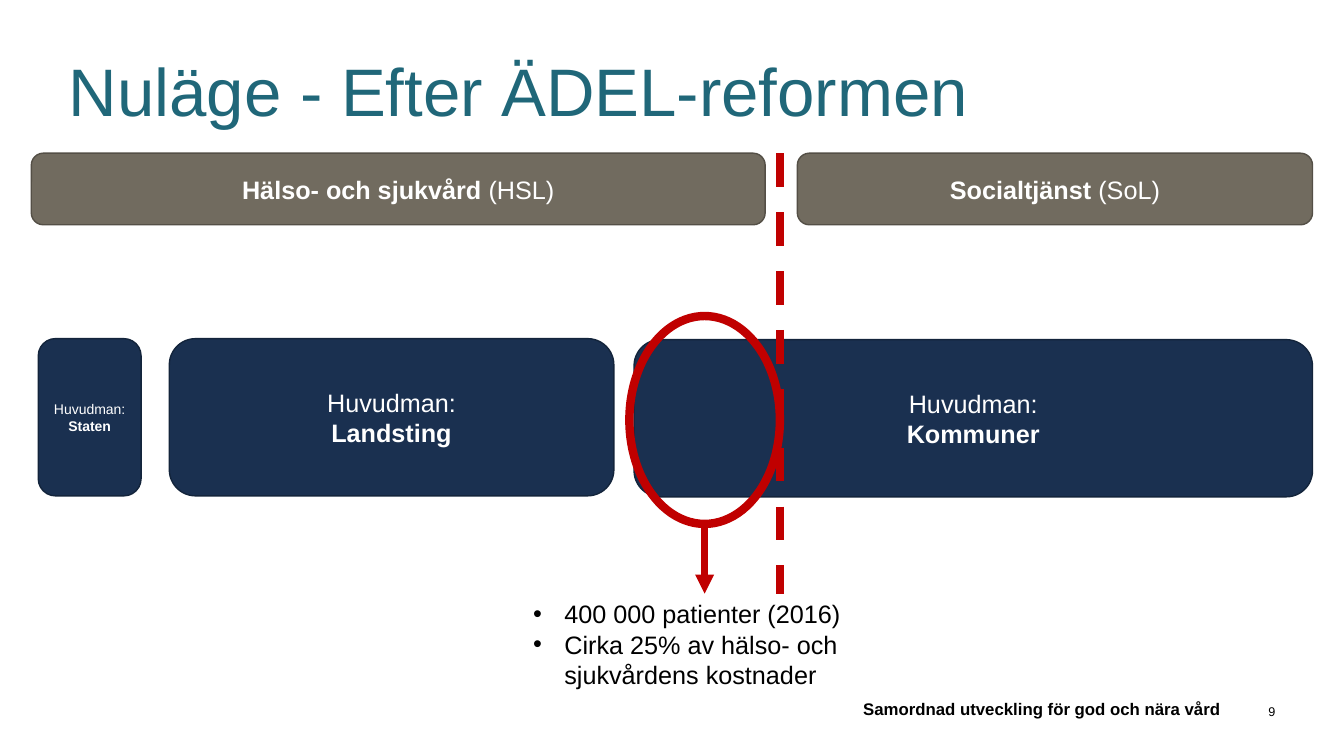
from dataclasses import dataclass
from typing import Optional

from lxml.etree import SubElement
from pptx import Presentation
from pptx.dml.color import RGBColor
from pptx.enum.dml import MSO_LINE_DASH_STYLE as Dash
from pptx.enum.shapes import MSO_CONNECTOR as Connector, MSO_SHAPE as Preset
from pptx.enum.text import MSO_ANCHOR as Anchor, PP_ALIGN as Align
from pptx.oxml.ns import qn
from pptx.util import Inches, Pt

COLOURS = {
    "title": "206779",
    "black": "000000",
    "white": "FFFFFF",
    "navy": "1A3050",
    "navy_edge": "13243B",
    "taupe": "716B5F",
    "taupe_edge": "544F46",
    "red": "C00000",
}
FONT = "Arial"
WIDTH, HEIGHT = Inches(13.33), Inches(7.5)
HEADER_TOP, HEADER_HEIGHT = 20.27, 9.47
OWNER_TOP, OWNER_HEIGHT = 44.8, 20.8
FOOTER_TOP, FOOTER_HEIGHT = 91.87, 3.2
NOTE_TOP = 78.53
BORDER_X = 58.05

Run = tuple[str, bool]
Lines = list[list[Run]]


@dataclass(frozen=True)
class Area:
    """Position and size in percent of the slide."""

    left: float
    top: float
    width: float
    height: float

    def lengths(self) -> tuple[int, int, int, int]:
        return across(self.left), down(self.top), across(self.width), down(self.height)


@dataclass(frozen=True)
class Box:
    area: Area
    lines: Lines
    colour: str
    size: int = 18


def across(percent: float) -> int:
    return round(WIDTH * percent / 100)


def down(percent: float) -> int:
    return round(HEIGHT * percent / 100)


def rgb(name: str) -> RGBColor:
    return RGBColor.from_string(COLOURS[name])


def owner(name: str, left: float, width: float, size: int = 18, top: float = OWNER_TOP) -> Box:
    lines = [[("Huvudman:", False)], [(name, True)]]
    return Box(Area(left, top, width, OWNER_HEIGHT), lines, "navy", size)


def header(name: str, law: str, left: float, width: float) -> Box:
    lines = [[(name, True), (f" ({law})", False)]]
    return Box(Area(left, HEADER_TOP, width, HEADER_HEIGHT), lines, "taupe")


def write(shape, lines: Lines, *, size: int, colour: str, align=Align.LEFT,
          anchor=Anchor.TOP, insets: Optional[tuple[float, float]] = None,
          spacing: Optional[float] = None, bullet: bool = False) -> None:
    frame = shape.text_frame
    frame.word_wrap = True
    frame.vertical_anchor = anchor
    if insets is not None:
        frame.margin_left = frame.margin_right = Inches(insets[0])
        frame.margin_top = frame.margin_bottom = Inches(insets[1])
    for index, line in enumerate(lines):
        paragraph = frame.add_paragraph() if index else frame.paragraphs[0]
        paragraph.alignment = align
        if spacing:
            paragraph.line_spacing = spacing
        if bullet:
            properties = paragraph._p.get_or_add_pPr()
            properties.set("marL", str(Inches(0.31)))
            properties.set("indent", str(-Inches(0.31)))
            SubElement(properties, qn("a:buFont")).set("typeface", FONT)
            SubElement(properties, qn("a:buChar")).set("char", "•")
        for text, bold in line:
            run = paragraph.add_run()
            run.text = text
            run.font.name = FONT
            run.font.size = Pt(size)
            run.font.bold = bold
            run.font.color.rgb = rgb(colour)


def add_text(slide, area: Area, lines: Lines, **text_format) -> None:
    write(slide.shapes.add_textbox(*area.lengths()), lines, **text_format)


def add_box(slide, box: Box) -> None:
    shape = slide.shapes.add_shape(Preset.ROUNDED_RECTANGLE, *box.area.lengths())
    shape.shadow.inherit = False
    shape.fill.solid()
    shape.fill.fore_color.rgb = rgb(box.colour)
    shape.line.color.rgb = rgb(f"{box.colour}_edge")
    shape.line.width = Pt(1)
    write(shape, box.lines, size=box.size, colour="white", align=Align.CENTER, anchor=Anchor.MIDDLE)


def add_ring(slide, area: Area) -> None:
    shape = slide.shapes.add_shape(Preset.OVAL, *area.lengths())
    shape.shadow.inherit = False
    shape.fill.background()
    shape.line.color.rgb = rgb("red")
    shape.line.width = Pt(6)


def add_vertical(slide, x: float, top: float, bottom: float, width: float,
                 dashed: bool = False, arrow: bool = False) -> None:
    connector = slide.shapes.add_connector(
        Connector.STRAIGHT, across(x), down(top), across(x), down(bottom))
    connector.line.color.rgb = rgb("red")
    connector.line.width = Pt(width)
    if dashed:
        connector.line.dash_style = Dash.DASH
    if arrow:
        SubElement(connector.line._get_or_add_ln(), qn("a:tailEnd")).set("type", "triangle")
    SubElement(connector._element.spPr, qn("a:effectLst"))


def main() -> None:
    presentation = Presentation()
    presentation.slide_width, presentation.slide_height = WIDTH, HEIGHT
    slide = presentation.slides.add_slide(presentation.slide_layouts[6])

    add_text(slide, Area(5.1, 5.2, 89.8, 15.07), [[("Nuläge - Efter ÄDEL-reformen", False)]],
             size=48, colour="title", anchor=Anchor.MIDDLE, insets=(0, 0.05), spacing=0.85)
    footers = [
        (17.03, 73.8, "Samordnad utveckling för god och nära vård", 12, True),
        (90.9, 4, "9", 9, False),
    ]
    for left, width, text, size, bold in footers:
        add_text(slide, Area(left, FOOTER_TOP, width, FOOTER_HEIGHT), [[(text, bold)]], size=size,
                 colour="black", align=Align.RIGHT, anchor=Anchor.BOTTOM, insets=(0, 0))

    for box in (
        owner("Landsting", 12.6, 33.08),
        owner("Kommuner", 47.18, 50.48, top=44.93),
        header("Hälso- och sjukvård", "HSL", 2.33, 54.6),
        header("Socialtjänst", "SoL", 59.33, 38.33),
        owner("Staten", 2.85, 7.65, size=10),
    ):
        add_box(slide, box)

    add_vertical(slide, BORDER_X, HEADER_TOP, NOTE_TOP, 6, dashed=True)
    ring = Area(46.83, 41.8, 11.2, 27.5)
    add_ring(slide, ring)
    add_vertical(slide, ring.left + ring.width / 2, ring.top + ring.height, NOTE_TOP, 4.5, arrow=True)
    add_text(slide, Area(38.93, NOTE_TOP, 27, 13.47),
             [[("400 000 patienter (2016)", False)],
              [("Cirka 25% av hälso- och sjukvårdens kostnader", False)]],
             size=18, colour="black", bullet=True)

    presentation.save("out.pptx")


if __name__ == "__main__":
    main()
